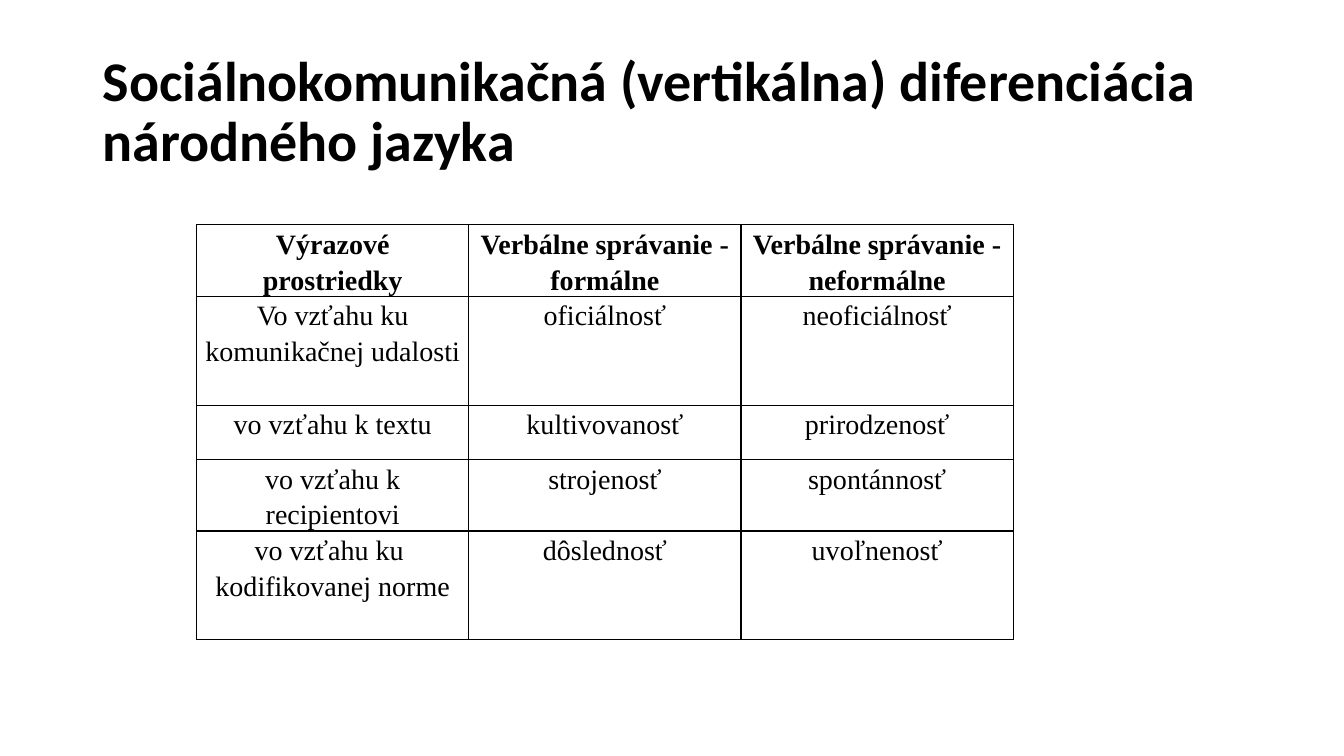
"""Build the slide on the vertical differentiation of the national language."""
from dataclasses import dataclass

from lxml.etree import SubElement
from pptx import Presentation
from pptx.dml.color import RGBColor
from pptx.enum.text import MSO_ANCHOR as Anchor, MSO_AUTO_SIZE as AutoSize, PP_ALIGN as Align
from pptx.oxml.ns import qn
from pptx.util import Emu, Pt

PX = 9144
BLACK = "000000"
COLUMN_WIDTH = 270
TITLE = "Sociálnokomunikačná (vertikálna) diferenciácia národného jazyka"


@dataclass(frozen=True)
class Row:
    """One table row: its height in px, its texts and its weight."""
    height: int
    texts: tuple[str, ...]
    bold: bool = False


ROWS = (
    Row(54, ("Výrazové prostriedky", "Verbálne správanie - formálne",
             "Verbálne správanie - neformálne"), True),
    Row(108, ("Vo vzťahu ku komunikačnej udalosti", "oficiálnosť", "neoficiálnosť")),
    Row(54, ("vo vzťahu k textu", "kultivovanosť", "prirodzenosť")),
    Row(54, ("vo vzťahu k recipientovi", "strojenosť", "spontánnosť")),
    Row(108, ("vo vzťahu ku  kodifikovanej norme", "dôslednosť", "uvoľnenosť")),
)


def px(length: int) -> Emu:
    return Emu(length * PX)


def colour(value: str) -> RGBColor:
    return RGBColor.from_string(value)


def apply(target, values: dict) -> None:
    for name, value in values.items():
        setattr(target, name, value)


def write(frame, text: str, para_format: dict, font_format: dict) -> None:
    para = frame.paragraphs[0]
    apply(para, para_format)
    span = para.add_run()
    span.text = text
    apply(span.font, font_format)
    span.font.color.rgb = colour(BLACK)


def add_borders(cell) -> None:
    properties = cell._tc.get_or_add_tcPr()
    for side in ("a:lnL", "a:lnR", "a:lnT", "a:lnB"):
        line = SubElement(properties, qn(side), w=str(Pt(1)))
        fill = SubElement(line, qn("a:solidFill"))
        SubElement(fill, qn("a:srgbClr"), val=BLACK)


def add_title(page) -> None:
    title = page.shapes.title
    apply(title, {"left": px(92), "top": px(40), "width": px(1150), "height": px(145)})
    apply(title.text_frame, {"word_wrap": True, "auto_size": AutoSize.NONE,
                             "vertical_anchor": Anchor.MIDDLE})
    write(title.text_frame, TITLE, {"alignment": Align.LEFT, "line_spacing": 0.9},
          {"name": "Calibri", "size": Pt(40), "bold": True})


def add_table(page, rows: tuple[Row, ...]) -> None:
    columns = len(rows[0].texts)
    table = page.shapes.add_table(
        len(rows), columns, px(195), px(223), px(columns * COLUMN_WIDTH),
        px(sum(row.height for row in rows))).table
    apply(table, {"first_row": False, "horz_banding": False})
    for column in table.columns:
        column.width = px(COLUMN_WIDTH)
    for table_row, row in zip(table.rows, rows):
        table_row.height = px(row.height)
        for cell, text in zip(table_row.cells, row.texts):
            apply(cell, {"margin_left": px(7), "margin_right": px(7),
                         "margin_top": 0, "margin_bottom": 0})
            add_borders(cell)
            cell.fill.background()
            write(cell.text_frame, text, {"alignment": Align.CENTER, "line_spacing": 1.15},
                  {"name": "Times New Roman", "size": Pt(20), "bold": row.bold})


def main() -> None:
    deck = Presentation()
    apply(deck, {"slide_width": px(1333), "slide_height": px(750)})
    page = deck.slides.add_slide(deck.slide_layouts.get_by_name("Title Only"))
    add_title(page)
    add_table(page, ROWS)
    deck.save("out.pptx")


if __name__ == "__main__":
    main()
